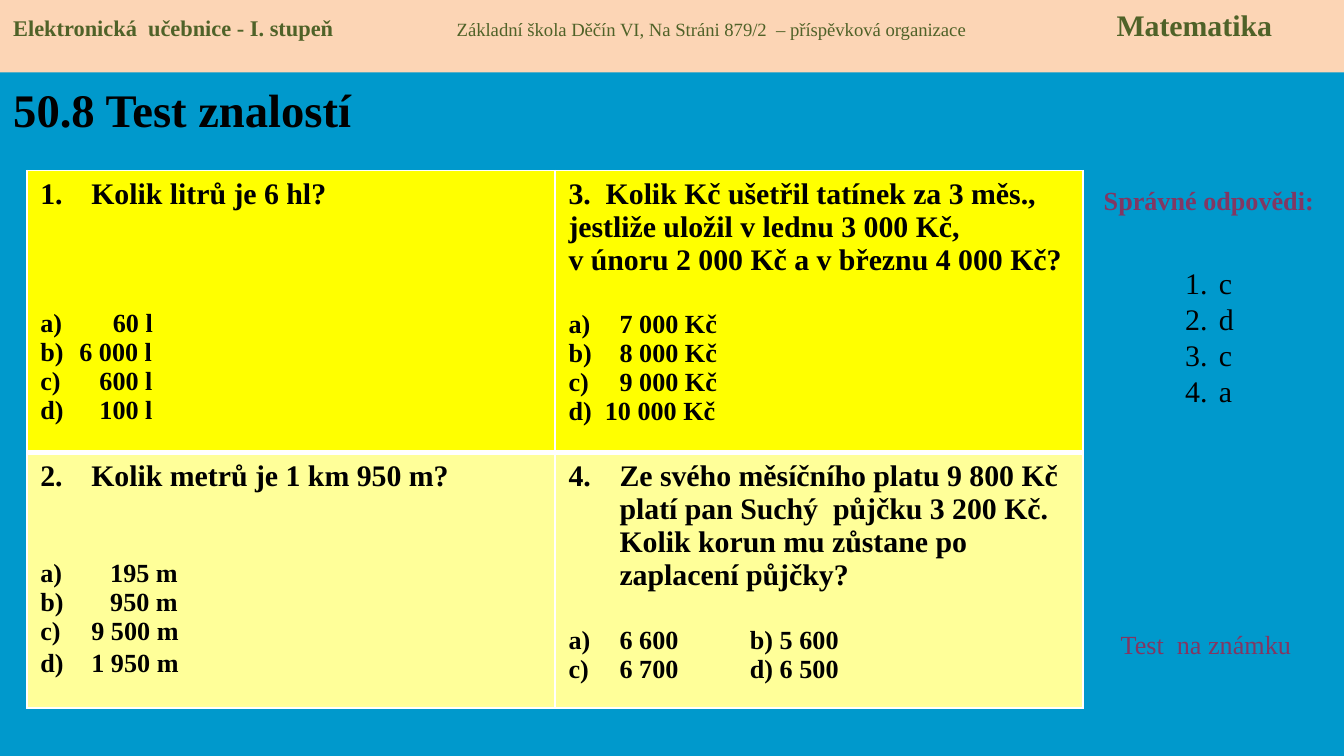
from dataclasses import dataclass

from lxml.etree import SubElement
from pptx import Presentation
from pptx.dml.color import RGBColor
from pptx.enum.shapes import MSO_SHAPE as Shape
from pptx.enum.text import MSO_ANCHOR as Anchor, PP_ALIGN as Align
from pptx.oxml.ns import qn
from pptx.util import Inches, Pt

FONT = "Times New Roman"
BLACK = RGBColor(0x00, 0x00, 0x00)
WHITE = RGBColor(0xFF, 0xFF, 0xFF)
BLUE = RGBColor(0x00, 0x99, 0xCC)
PEACH = RGBColor(0xFC, 0xD5, 0xB5)
GREEN = RGBColor(0x4F, 0x62, 0x28)
PURPLE = RGBColor(0x81, 0x37, 0x63)
YELLOW = RGBColor(0xFF, 0xFF, 0x00)
PALE_YELLOW = RGBColor(0xFF, 0xFF, 0x99)

NUMBER, LETTER = "arabicPeriod", "alphaLcParenR"


@dataclass
class Line:
    """One paragraph of text with its numbering, indent, gap and tab stops."""

    text: str
    size: float = 14
    scheme: str = ""
    start: int = 1
    indent: float = 0.38
    gap: float = 0
    tabs: tuple = ()


def question(text, start):
    """Return a numbered question line."""
    return Line(text, 16, NUMBER, start)


def choices(items, gap, last_gap=0):
    """Letter the (text, indent) pairs from a) and set the gap above them."""
    gaps = [gap] + [0] * (len(items) - 2) + [last_gap]
    return [
        Line(text, 14, LETTER, start, indent, above)
        for start, ((text, indent), above) in enumerate(zip(items, gaps), 1)
    ]


ANSWER_TABS = (0.38, 1.35)
CELLS = [
    [
        [question("Kolik litrů je 6 hl?", 1)]
        + choices([("60 l", 0.54), ("6 000 l", 0.29), ("600 l", 0.44), ("100 l", 0.44)], 53),
        [
            Line("3.  Kolik Kč ušetřil tatínek za 3 měs., jestliže uložil v lednu 3 000 Kč,", 16),
            Line("v únoru 2 000 Kč a v březnu 4 000 Kč?", 16),
        ]
        + choices([("7 000 Kč", 0.38), ("8 000 Kč", 0.38), ("9 000 Kč", 0.38)], 18)
        + [Line("d)  10 000 Kč")],
    ],
    [
        [question("Kolik metrů je 1 km 950 m?", 2)]
        + choices([("195 m", 0.52), ("950 m", 0.52), ("9 500 m", 0.38), ("1 950 m", 0.38)], 35.5, 2),
        [
            question(
                "Ze svého měsíčního platu 9 800 Kč platí pan Suchý  půjčku 3 200 Kč. "
                "Kolik korun mu zůstane po zaplacení půjčky?",
                4,
            ),
            Line("a)\t6 600\tb) 5 600", gap=18, tabs=ANSWER_TABS),
            Line("c)\t6 700\td) 6 500", tabs=ANSWER_TABS),
        ],
    ],
]


def style_span(span, size, color, bold):
    """Set the font of one run."""
    span.font.name = FONT
    span.font.size = Pt(size)
    span.font.bold = bold
    span.font.color.rgb = color


def set_numbering(para, scheme, start, indent):
    """Number a paragraph with a hanging indent."""
    props = para._p.get_or_add_pPr()
    props.set("marL", str(Inches(indent)))
    props.set("indent", str(-Inches(indent)))
    SubElement(props, qn("a:buFont"), typeface="+mj-lt")
    SubElement(props, qn("a:buAutoNum"), type=scheme, startAt=str(start))


def set_tabs(para, stops):
    """Give a paragraph left-aligned tab stops."""
    tab_list = SubElement(para._p.get_or_add_pPr(), qn("a:tabLst"))
    for stop in stops:
        SubElement(tab_list, qn("a:tab"), pos=str(Inches(stop)), algn="l")


def write_lines(frame, lines, color=BLACK, bold=True, spacing=None):
    """Fill a text frame with lines."""
    frame.text = "\n".join(line.text for line in lines)
    for para, line in zip(frame.paragraphs, lines):
        if spacing:
            para.line_spacing = Pt(spacing)
        para.space_before = Pt(line.gap)
        if line.scheme:
            set_numbering(para, line.scheme, line.start, line.indent)
        if line.tabs:
            set_tabs(para, line.tabs)
        for span in para.runs:
            style_span(span, line.size, color, bold)


def add_text(page, place, lines, color=BLACK, bold=False, wrap=True, spacing=None):
    """Add a text box and return its frame."""
    frame = page.shapes.add_textbox(*map(Inches, place)).text_frame
    frame.word_wrap = wrap
    write_lines(frame, lines, color, bold, spacing)
    return frame


def add_header(page):
    """Add the banner with its three texts."""
    banner = page.shapes.add_shape(Shape.RECTANGLE, 0, 0, Inches(10), Inches(0.54))
    banner.shadow.inherit = False
    banner.fill.solid()
    banner.fill.fore_color.rgb = PEACH
    banner.line.fill.background()
    banner.text_frame.vertical_anchor = Anchor.TOP
    para = banner.text_frame.paragraphs[0]
    para.alignment = Align.LEFT
    set_tabs(para, (3.3, 8.21))
    for text, size, bold in (
        ("Elektronická  učebnice - I. stupeň\t", 12, True),
        ("Základní škola Děčín VI, Na Stráni 879/2  – příspěvková organizace\t", 10, False),
        ("Matematika", 16, True),
    ):
        span = para.add_run()
        span.text = text
        style_span(span, size, GREEN, bold)


def set_borders(cell, widths):
    """Draw white cell borders, with widths keyed by side."""
    props = cell._tc.get_or_add_tcPr()
    for position, (side, width) in enumerate(widths.items()):
        border = props.makeelement(qn(f"a:ln{side}"), {"w": str(Pt(width))})
        props.insert(position, border)
        fill = SubElement(border, qn("a:solidFill"))
        SubElement(fill, qn("a:srgbClr"), val=str(WHITE))


def add_questions(page):
    """Add the two-by-two table of questions."""
    place = map(Inches, (0.2, 1.27, 7.86, 4))
    table = page.shapes.add_table(2, 2, *place).table
    rows = zip(table.rows, CELLS, (2.1, 1.9), (YELLOW, PALE_YELLOW), ((1, 3), (3, 1)))
    for row, contents, height, color, (top, bottom) in rows:
        row.height = Inches(height)
        for cell, lines in zip(row.cells, contents):
            cell.fill.solid()
            cell.fill.fore_color.rgb = color
            set_borders(cell, {"L": 1, "R": 1, "T": top, "B": bottom})
            write_lines(cell.text_frame, lines)


def main():
    """Build the slide and save it."""
    deck = Presentation()
    deck.slide_width = Inches(10)
    deck.slide_height = deck.slide_width * 9 // 16
    page = deck.slides.add_slide(deck.slide_layouts[6])
    page.background.fill.solid()
    page.background.fill.fore_color.rgb = BLUE

    title = add_text(page, (0, 0.55, 2.75, 0.52), [Line("50.8 Test znalostí", 25)], bold=True, wrap=False)
    title.vertical_anchor = Anchor.MIDDLE
    heading = add_text(page, (8.05, 1.32, 1.89, 0.34), [Line("Správné odpovědi:")], PURPLE, True)
    heading.paragraphs[0].alignment = Align.CENTER
    add_questions(page)
    key = [Line(letter, 16, NUMBER, start, 0.25) for start, letter in enumerate("cdca", 1)]
    answers = add_text(page, (8.72, 1.65, 0.55, 1.99), key, spacing=19.2)
    answers.margin_top = Inches(0.32)
    add_text(page, (8.24, 4.63, 1.57, 0.34), [Line("Test  na známku")], PURPLE)
    add_header(page)
    deck.save("out.pptx")


if __name__ == "__main__":
    main()
